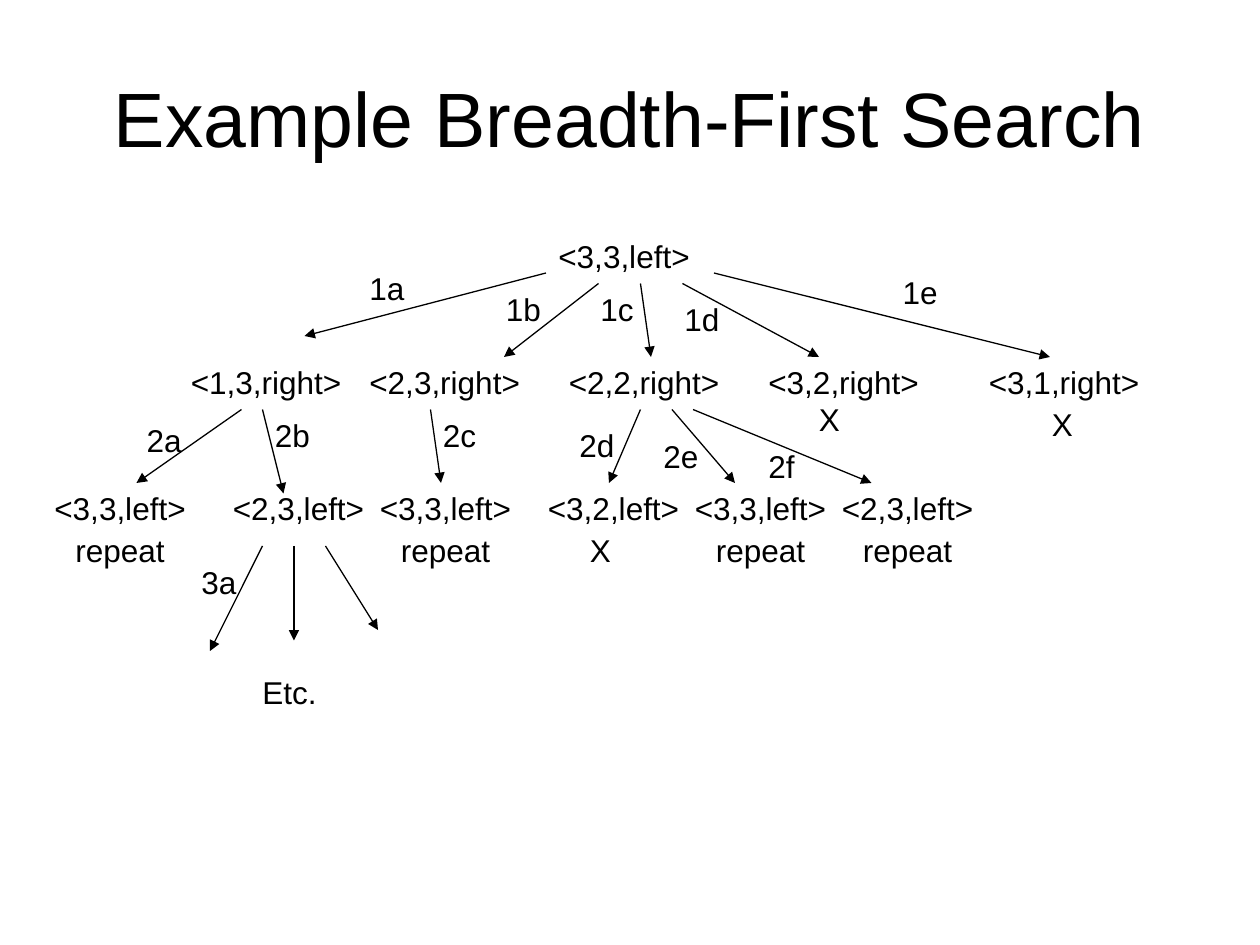
from dataclasses import dataclass

from lxml.etree import SubElement
from pptx import Presentation
from pptx.dml.color import RGBColor
from pptx.enum.shapes import MSO_CONNECTOR as Link
from pptx.enum.text import MSO_ANCHOR as Anchor, MSO_AUTO_SIZE as Fit, PP_ALIGN as Align
from pptx.oxml.ns import qn
from pptx.slide import Slide
from pptx.util import Cm, Pt


@dataclass(frozen=True)
class Theme:
    ink: RGBColor = RGBColor(0, 0, 0)
    paper: RGBColor = RGBColor(255, 255, 255)
    font: str = "Arial"
    head: Pt = Pt(44)
    body: Pt = Pt(18)
    line: Pt = Pt(0.75)


@dataclass(frozen=True)
class Label:
    text: str
    x: float
    y: float
    wide: float


@dataclass(frozen=True)
class Arrow:
    x1: float
    y1: float
    x2: float
    y2: float


THEME = Theme()
TALL = 4.8  # height of a one-line label, in grid steps
LEFT, RIGHT, REPEAT, CROSS, STEP = 14.9, 16.8, 10.9, 4.4, 5.8

# All places below count grid steps, twelve to 2.54 cm.
STATES = [
    Label("<3,3,left>", 52, 22, LEFT),
    *(Label(f"<{name},right>", x, 34, RIGHT) for name, x in
      [("1,3", 17), ("2,3", 34), ("2,2", 53), ("3,2", 72), ("3,1", 93)]),
    *(Label(f"<{name},left>", x, 46, LEFT) for name, x in
      [("3,3", 4), ("2,3", 21), ("3,3", 35), ("3,2", 51), ("3,3", 65), ("2,3", 79)]),
]
MARKS = [
    *(Label("repeat", x, 50, REPEAT) for x in (6, 37, 67, 81)),
    *(Label("X", x, y, CROSS) for x, y in [(76.8, 37.5), (99, 38), (55, 50)]),
    Label("Etc.", 23.8, 63.5, 7.6),
]
STEPS = [
    Label("1a", 34, 25, STEP),
    Label("1b", 47, 27, STEP),
    Label("1c", 56, 27, 5.6),
    Label("1d", 64, 28, STEP),
    Label("1e", 84.8, 25.4, STEP),
    Label("2a", 12.8, 39.5, STEP),
    Label("2b", 25, 39, STEP),
    Label("2c", 41, 39, 5.6),
    Label("2d", 54, 40, STEP),
    Label("2e", 62, 41, STEP),
    Label("2f", 72, 42, 4.9),
    Label("3a", 18, 53, STEP),
]
ARROWS = [
    Arrow(52, 26, 29, 32),
    Arrow(57, 27, 48, 34),
    Arrow(61, 27, 62, 34),
    Arrow(65, 27, 78, 34),
    Arrow(68, 26, 100, 34),
    Arrow(23, 39, 13, 46),
    Arrow(25, 39, 27, 47),
    Arrow(41, 39, 42, 46),
    Arrow(61, 39, 58, 46),
    Arrow(64, 39, 70, 46),
    Arrow(66, 39, 83, 46),
    Arrow(25, 52, 20, 62),
    Arrow(28, 52, 28, 61),
    Arrow(31, 52, 36, 60),
]


def grid(steps: float) -> Cm:
    return Cm(steps * 2.54 / 12)


def add_text(slide: Slide, label: Label, tall: float, size: Pt):
    box = slide.shapes.add_textbox(*map(grid, (label.x, label.y, label.wide, tall)))
    frame = box.text_frame
    frame.text = label.text
    font = frame.paragraphs[0].runs[0].font
    font.name, font.size = THEME.font, size
    font.color.rgb = THEME.ink
    return frame


def add_title(slide: Slide) -> None:
    label = Label("Example Breadth-First Search", 6, 3.6, 108)
    frame = add_text(slide, label, 15, THEME.head)
    frame.word_wrap = True
    frame.vertical_anchor = Anchor.MIDDLE
    frame.paragraphs[0].alignment = Align.CENTER


def add_label(slide: Slide, label: Label) -> None:
    frame = add_text(slide, label, TALL, THEME.body)
    frame.word_wrap = False
    frame.auto_size = Fit.SHAPE_TO_FIT_TEXT


def add_arrow(slide: Slide, arrow: Arrow) -> None:
    ends = map(grid, (arrow.x1, arrow.y1, arrow.x2, arrow.y2))
    link = slide.shapes.add_connector(Link.STRAIGHT, *ends)
    link.line.color.rgb = THEME.ink
    link.line.width = THEME.line
    SubElement(link.line._get_or_add_ln(), qn("a:tailEnd"), type="triangle")
    SubElement(link._element.spPr, qn("a:effectLst"))


def main() -> None:
    deck = Presentation()
    deck.slide_width, deck.slide_height = Cm(25.4), Cm(19.05)
    slide = deck.slides.add_slide(deck.slide_layouts[6])
    fill = slide.background.fill
    fill.solid()
    fill.fore_color.rgb = THEME.paper
    add_title(slide)
    for arrow in ARROWS:
        add_arrow(slide, arrow)
    for label in STATES + MARKS + STEPS:
        add_label(slide, label)
    deck.save("out.pptx")


if __name__ == "__main__":
    main()
